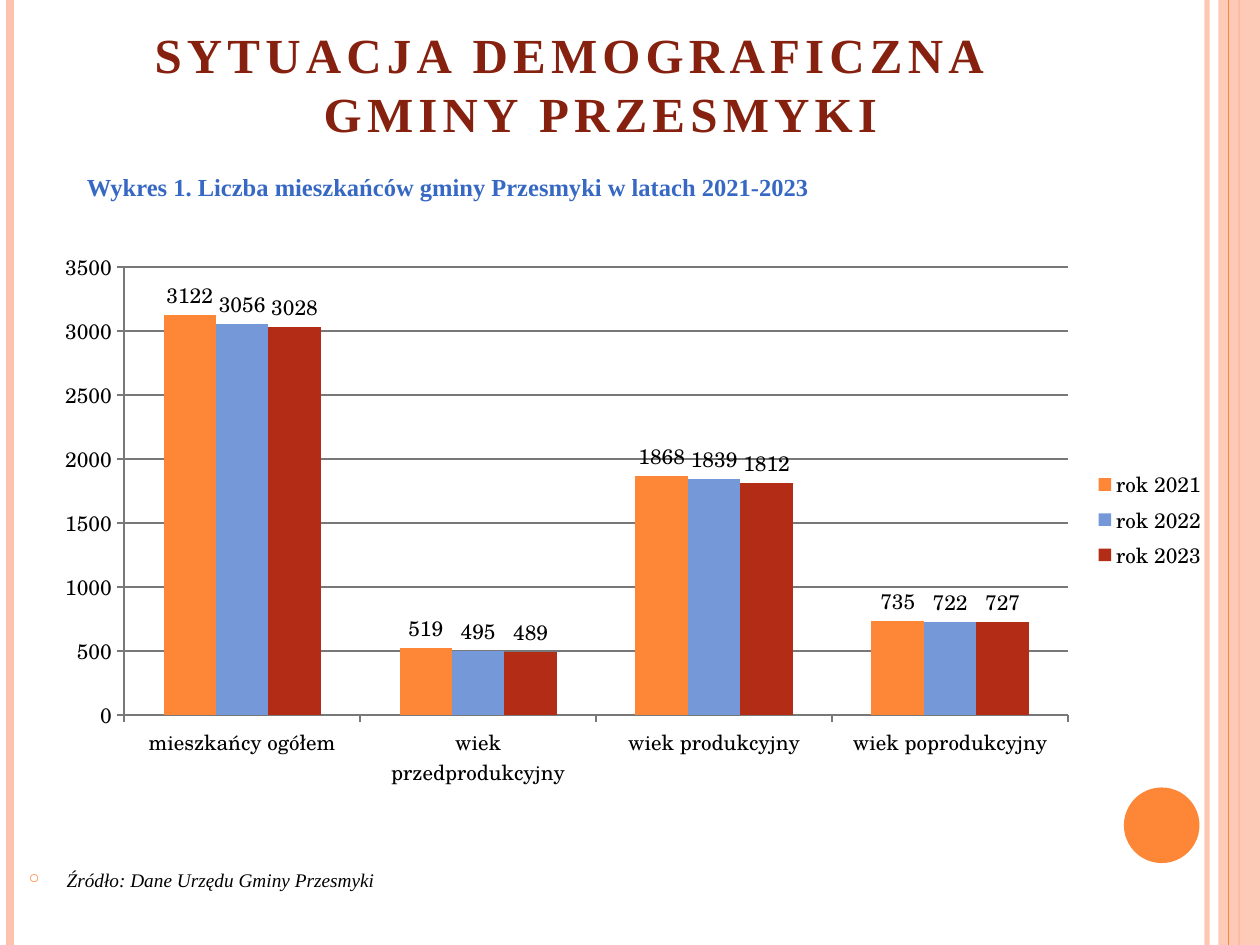
from lxml.etree import SubElement
from pptx import Presentation
from pptx.chart.data import CategoryChartData
from pptx.dml.color import RGBColor
from pptx.enum.chart import XL_CHART_TYPE as ChartType
from pptx.enum.chart import XL_LABEL_POSITION as LabelPosition
from pptx.enum.chart import XL_LEGEND_POSITION as LegendPosition
from pptx.enum.chart import XL_TICK_MARK as TickMark
from pptx.enum.shapes import MSO_CONNECTOR as Connector
from pptx.enum.shapes import MSO_SHAPE as Shape
from pptx.enum.text import MSO_ANCHOR as Anchor
from pptx.enum.text import PP_ALIGN as Align
from pptx.oxml.ns import qn
from pptx.util import Inches, Pt

SERIF = "Times New Roman"
CHART_FONT = "TeX Gyre Schola"
ORANGE, PINK, BLACK, GREY = "FE8637", "FEC3AE", "000000", "787878"


def color(value):
    return RGBColor.from_string(value)


def set_opacity(fill_format, percent):
    SubElement(fill_format.find(".//" + qn("a:srgbClr")), qn("a:alpha"), val=str(percent * 1000))


class SlideBuilder:
    def __init__(self, slide):
        self.slide = slide

    def style_font(self, font, name, size, tint, bold=False, italic=False):
        font.name, font.size = name, Pt(size)
        font.bold, font.italic = bold, italic
        font.color.rgb = color(tint)

    def vertical_line(self, x, width, tint, opacity=100):
        line = self.slide.shapes.add_connector(
            Connector.STRAIGHT, Inches(x), Inches(0), Inches(x), Inches(7.5))
        line.line.width = Pt(width)
        line.line.color.rgb = color(tint)
        properties = line._element.spPr
        SubElement(properties, qn("a:effectLst"))
        if opacity < 100:
            set_opacity(properties, opacity)
        return line

    def shape(self, kind, box, tint, opacity=100):
        shape = self.slide.shapes.add_shape(kind, *map(Inches, box))
        shape.shadow.inherit = False
        shape.fill.solid()
        shape.fill.fore_color.rgb = color(tint)
        shape.line.fill.background()
        if opacity < 100:
            set_opacity(shape._element.spPr, opacity)
        return shape

    def text(self, box, wording, size, tint, anchor=Anchor.TOP, align=Align.LEFT, **style):
        shape = self.slide.shapes.add_textbox(*map(Inches, box))
        frame = shape.text_frame
        frame.word_wrap = True
        frame.vertical_anchor = anchor
        paragraph = frame.paragraphs[0]
        paragraph.text = wording
        paragraph.alignment = align
        self.style_font(paragraph.font, SERIF, size, tint, **style)
        return paragraph

    def bullet(self, paragraph, symbol, tint, percent, indent):
        paragraph.space_before = Pt(6)
        properties = paragraph._p.get_or_add_pPr()
        properties.set("marL", str(Inches(indent)))
        properties.set("indent", str(-Inches(indent)))
        bullet_color = properties.makeelement(qn("a:buClr"))
        SubElement(bullet_color, qn("a:srgbClr"), val=tint)
        bullet_size = properties.makeelement(qn("a:buSzPct"), val=str(percent * 1000))
        bullet_symbol = properties.makeelement(qn("a:buChar"), char=symbol)
        defaults = properties.find(qn("a:defRPr"))
        for element in (bullet_color, bullet_size, bullet_symbol):
            defaults.addprevious(element)

    def column_chart(self, box, categories, series):
        data = CategoryChartData()
        data.categories = categories
        for name, values, _ in series:
            data.add_series(name, values)
        chart = self.slide.shapes.add_chart(
            ChartType.COLUMN_CLUSTERED, *map(Inches, box), data).chart
        self.style_font(chart.font, CHART_FONT, 12, BLACK)
        chart.has_title = False
        chart.has_legend = True
        chart.legend.position = LegendPosition.RIGHT
        chart.legend.include_in_layout = False
        self.style_font(chart.legend.font, CHART_FONT, 12, BLACK)

        value_axis = chart.value_axis
        value_axis.minimum_scale, value_axis.maximum_scale = 0, 3500
        value_axis.major_unit = 500
        value_axis.has_major_gridlines = True
        for axis in (chart.category_axis, value_axis):
            axis.major_tick_mark = TickMark.OUTSIDE
            self.style_font(axis.tick_labels.font, CHART_FONT, 12, BLACK)
        for line in (chart.category_axis.format.line, value_axis.format.line,
                     value_axis.major_gridlines.format.line):
            line.color.rgb = color(GREY)
            line.width = Pt(1)

        plot = chart.plots[0]
        plot.gap_width, plot.overlap = 150, 0
        plot.vary_by_categories = False
        for columns, (_, _, tint) in zip(plot.series, series):
            columns.format.fill.solid()
            columns.format.fill.fore_color.rgb = color(tint)
            labels = columns.data_labels
            labels.show_value = True
            labels.position = LabelPosition.OUTSIDE_END
            self.style_font(labels.font, CHART_FONT, 12, BLACK)


def main():
    presentation = Presentation()
    presentation.slide_width, presentation.slide_height = Inches(10), Inches(7.5)
    builder = SlideBuilder(presentation.slides.add_slide(presentation.slide_layouts[6]))

    builder.vertical_line(9.58, 3, PINK, opacity=93)
    builder.vertical_line(0.08, 4.5, PINK)
    stripe = builder.shape(Shape.RECTANGLE, (9.67, 0, 0.33, 7.5), PINK, opacity=87)
    stripe_axis = builder.vertical_line(9.83, 1.5, ORANGE)
    stripe_axis.begin_connect(stripe, 0)
    stripe_axis.end_connect(stripe, 2)
    stripe._element.addprevious(stripe_axis._element)
    builder.vertical_line(9.75, 0.75, ORANGE)
    builder.shape(Shape.OVAL, (8.92, 6.25, 0.6, 0.6), ORANGE)

    title = builder.text((0.33, 0.26, 9.5, 0.92), "SYTUACJA DEMOGRAFICZNA \vGMINY PRZESMYKI",
                         28, "862110", Anchor.BOTTOM, Align.CENTER, bold=True)
    for run in title.runs:
        run.font._element.set("spc", "300")
        run.font._element.set("cap", "small")

    builder.column_chart(
        (0.33, 1.91, 9.34, 4.43),
        ("mieszkańcy ogółem", "wiek przedprodukcyjny", "wiek produkcyjny", "wiek poprodukcyjny"),
        (("rok 2021", (3122, 519, 1868, 735), ORANGE),
         ("rok 2022", (3056, 495, 1839, 722), "7598D9"),
         ("rok 2023", (3028, 489, 1812, 727), "B32C16")))

    source = builder.text((0.13, 6.84, 9.09, 0.47), "Źródło: Dane Urzędu Gminy Przesmyki",
                          11, BLACK, italic=True)
    builder.bullet(source, "○", ORANGE, 70, 0.3)
    builder.text((0.59, 1.32, 8.29, 0.34),
                 "Wykres 1. Liczba mieszkańców gminy Przesmyki w latach 2021-2023",
                 14, "3668C4", bold=True)

    presentation.save("out.pptx")


if __name__ == "__main__":
    main()
